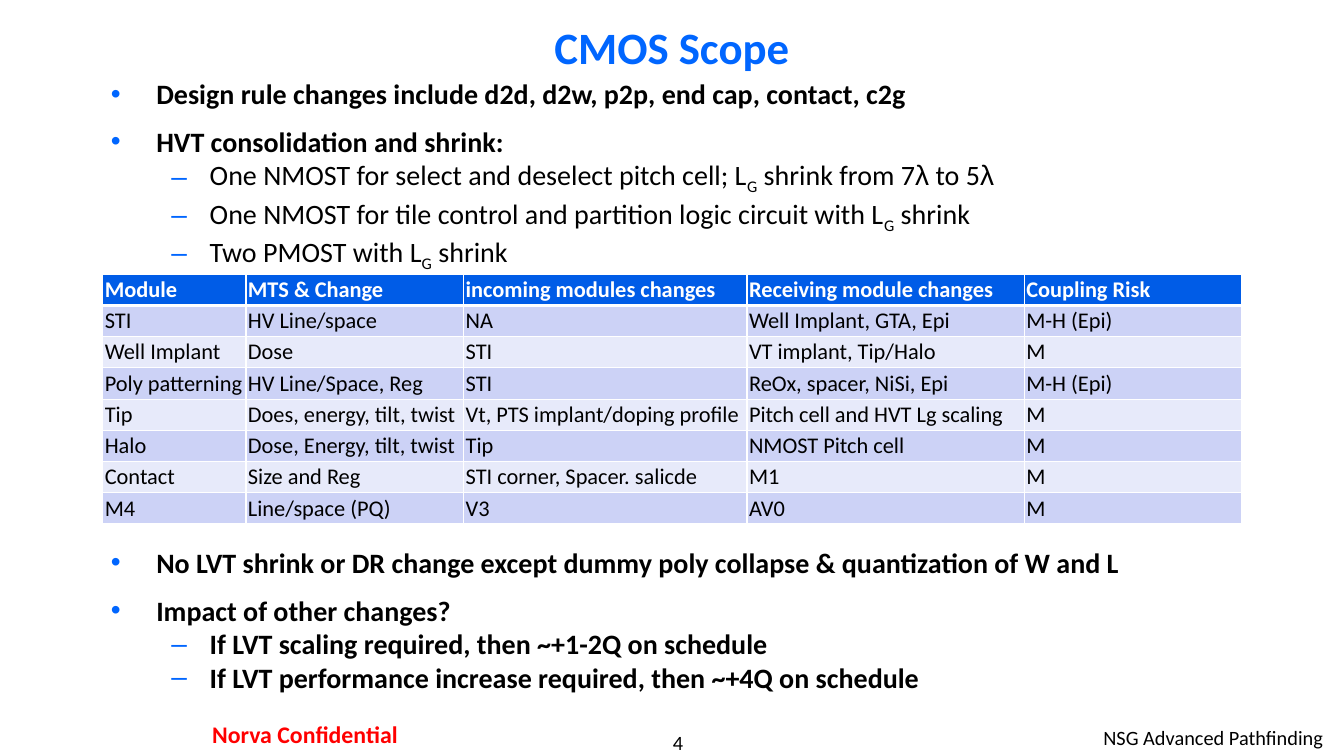
import pptx
import pptx.dml.color
import pptx.enum.text
import pptx.util
from lxml import etree
from pptx.oxml.ns import qn

Inches, Pt = pptx.util.Inches, pptx.util.Pt
ALIGN = pptx.enum.text.PP_ALIGN
ANCHOR = pptx.enum.text.MSO_ANCHOR

COLORS = {"accent": "0066FF", "text": "000000", "white": "FFFFFF", "alert": "FF0000",
          "header": "005CE7", "odd_row": "CCD2F6", "even_row": "E7EAFA"}

TITLE = "CMOS Scope"
GATE = ("G", {"subscript": True})
LAMBDA = ("λ", {"font": "Arial"})
TABLE_GAP = 195  # points left free between the bullets for the table

# level, bold, space before in points, pieces of text
BULLETS = [
    (0, True, 0, ["Design rule changes include d2d, d2w, p2p, end cap, contact, c2g"]),
    (0, True, 10, ["HVT consolidation and shrink:"]),
    (1, False, 0, ["One NMOST for select and deselect pitch cell; L", GATE,
                   " shrink from 7", LAMBDA, " to 5", LAMBDA]),
    (1, False, 0, ["One NMOST for tile control and partition logic circuit with L",
                   GATE, " shrink"]),
    (1, False, 0, ["Two PMOST with L", GATE, " shrink"]),
    (0, True, TABLE_GAP, ["No LVT shrink or DR change except dummy poly collapse "
                          "& quantization of W and L"]),
    (0, True, 10, ["Impact of other changes?"]),
    (1, True, 0, ["If LVT scaling required, then ~+1-2Q on schedule"]),
    (1, True, 0, ["If LVT performance increase required, then ~+4Q on schedule"]),
]
BULLET_LEVELS = [("•", 0.45, -0.45), ("–", 0.98, -0.38)]  # mark, margin, indent

MODULES = [
    ("Module", "MTS & Change", "incoming modules changes", "Receiving module changes",
     "Coupling Risk"),
    ("STI", "HV Line/space", "NA", "Well Implant, GTA, Epi", "M-H (Epi)"),
    ("Well Implant", "Dose", "STI", "VT implant, Tip/Halo", "M"),
    ("Poly patterning", "HV Line/Space, Reg", "STI", "ReOx, spacer, NiSi, Epi", "M-H (Epi)"),
    ("Tip", "Does, energy, tilt, twist", "Vt, PTS implant/doping profile",
     "Pitch cell and HVT Lg scaling", "M"),
    ("Halo", "Dose, Energy, tilt, twist", "Tip", "NMOST Pitch cell", "M"),
    ("Contact", "Size and Reg", "STI corner, Spacer. salicde", "M1", "M"),
    ("M4", "Line/space (PQ)", "V3", "AV0", "M"),
]
COLUMN_WIDTHS = [1.42, 2.16, 2.81, 2.75, 2.15]
ROW_HEIGHT = 0.31

# text, box, margins (x, y), alignment, format
FOOTERS = [
    ("4", (5.56, 7.24, 2.33, 0.24), (0, 0), ALIGN.CENTER, {"size": 14.5}),
    ("NSG Advanced Pathfinding", (8.83, 7.15, 4.39, 0.35), (0.1, 0.05), ALIGN.RIGHT,
     {"size": 14.5}),
    ("Norva Confidential", (1.55, 7.08, 2.95, 0.41), (0.12, 0.06), ALIGN.CENTER,
     {"size": 17, "color": "alert", "bold": True}),
]


def rgb(color):
    return pptx.dml.color.RGBColor.from_string(COLORS[color])


def add_text(paragraph, text, size=20, color="text", bold=False, font="Calibri",
             subscript=False):
    run = paragraph.add_run()
    run.text = text
    run.font.size = Pt(size)
    run.font.bold = bold
    run.font.name = font
    run.font.color.rgb = rgb(color)
    if subscript:
        run._r.get_or_add_rPr().set("baseline", "-25000")


def place(shape, box):
    shape.left, shape.top, shape.width, shape.height = map(Inches, box)


def set_margins(target, x, y):
    """Set the inner margins of a text frame or table cell."""
    target.margin_left = target.margin_right = Inches(x)
    target.margin_top = target.margin_bottom = Inches(y)


def set_bullet(paragraph, level):
    mark, margin, indent = BULLET_LEVELS[level]
    paragraph.level = level
    properties = paragraph._p.get_or_add_pPr()
    properties.set("marL", str(Inches(margin)))
    properties.set("indent", str(Inches(indent)))
    color = etree.SubElement(properties, qn("a:buClr"))
    etree.SubElement(color, qn("a:srgbClr"), val=COLORS["accent"])
    etree.SubElement(properties, qn("a:buFont"), typeface="Arial")
    etree.SubElement(properties, qn("a:buChar"), char=mark)


def set_borders(cell, **widths):
    """Draw white cell borders; widths in points by side L, R, T, B."""
    for side in "LRTB":
        line = etree.SubElement(cell._tc.get_or_add_tcPr(), qn(f"a:ln{side}"),
                                w=str(Pt(widths.get(side, 1))))
        fill = etree.SubElement(line, qn("a:solidFill"))
        etree.SubElement(fill, qn("a:srgbClr"), val=COLORS["white"])


def add_title(slide):
    title = slide.shapes.title
    place(title, (1, 0.17, 11.33, 0.58))
    frame = title.text_frame
    frame.auto_size = pptx.enum.text.MSO_AUTO_SIZE.NONE
    frame.vertical_anchor = ANCHOR.MIDDLE
    frame.paragraphs[0].alignment = ALIGN.CENTER
    add_text(frame.paragraphs[0], TITLE, size=32, color="accent", bold=True)


def add_bullets(slide):
    body = slide.placeholders[1]
    place(body, (1, 0.71, 11.33, 6.34))
    frame = body.text_frame
    frame.auto_size = pptx.enum.text.MSO_AUTO_SIZE.NONE
    for index, (level, bold, space, pieces) in enumerate(BULLETS):
        paragraph = frame.add_paragraph() if index else frame.paragraphs[0]
        set_bullet(paragraph, level)
        paragraph.space_before = Pt(space)
        for piece in pieces:
            text, style = (piece, {}) if isinstance(piece, str) else piece
            add_text(paragraph, text, bold=bold, **style)


def add_modules(slide):
    modules = slide.shapes.add_table(
        len(MODULES), len(COLUMN_WIDTHS), Inches(1.02), Inches(2.72),
        Inches(sum(COLUMN_WIDTHS)), Inches(ROW_HEIGHT * len(MODULES))).table
    for column, width in zip(modules.columns, COLUMN_WIDTHS):
        column.width = Inches(width)
    for r, entries in enumerate(MODULES):
        modules.rows[r].height = Inches(ROW_HEIGHT)
        header = r == 0
        fill = "header" if header else "odd_row" if r % 2 else "even_row"
        for c, entry in enumerate(entries):
            cell = modules.cell(r, c)
            set_margins(cell, 0.02, 0.02)
            cell.vertical_anchor = ANCHOR.MIDDLE
            set_borders(cell, T=3 if r == 1 else 1, B=3 if header else 1)
            cell.fill.solid()
            cell.fill.fore_color.rgb = rgb(fill)
            add_text(cell.text_frame.paragraphs[0], entry, size=16, bold=header,
                     color="white" if header else "text")


def add_footers(slide):
    for text, box, margins, alignment, style in FOOTERS:
        frame = slide.shapes.add_textbox(*map(Inches, box)).text_frame
        frame.word_wrap = True
        set_margins(frame, *margins)
        frame.paragraphs[0].alignment = alignment
        add_text(frame.paragraphs[0], text, **style)


def main():
    deck = pptx.Presentation()
    deck.slide_width, deck.slide_height = Inches(13.33), Inches(7.5)
    slide = deck.slides.add_slide(deck.slide_layouts[1])
    add_footers(slide)
    add_title(slide)
    add_bullets(slide)
    add_modules(slide)
    deck.save("out.pptx")


if __name__ == "__main__":
    main()
